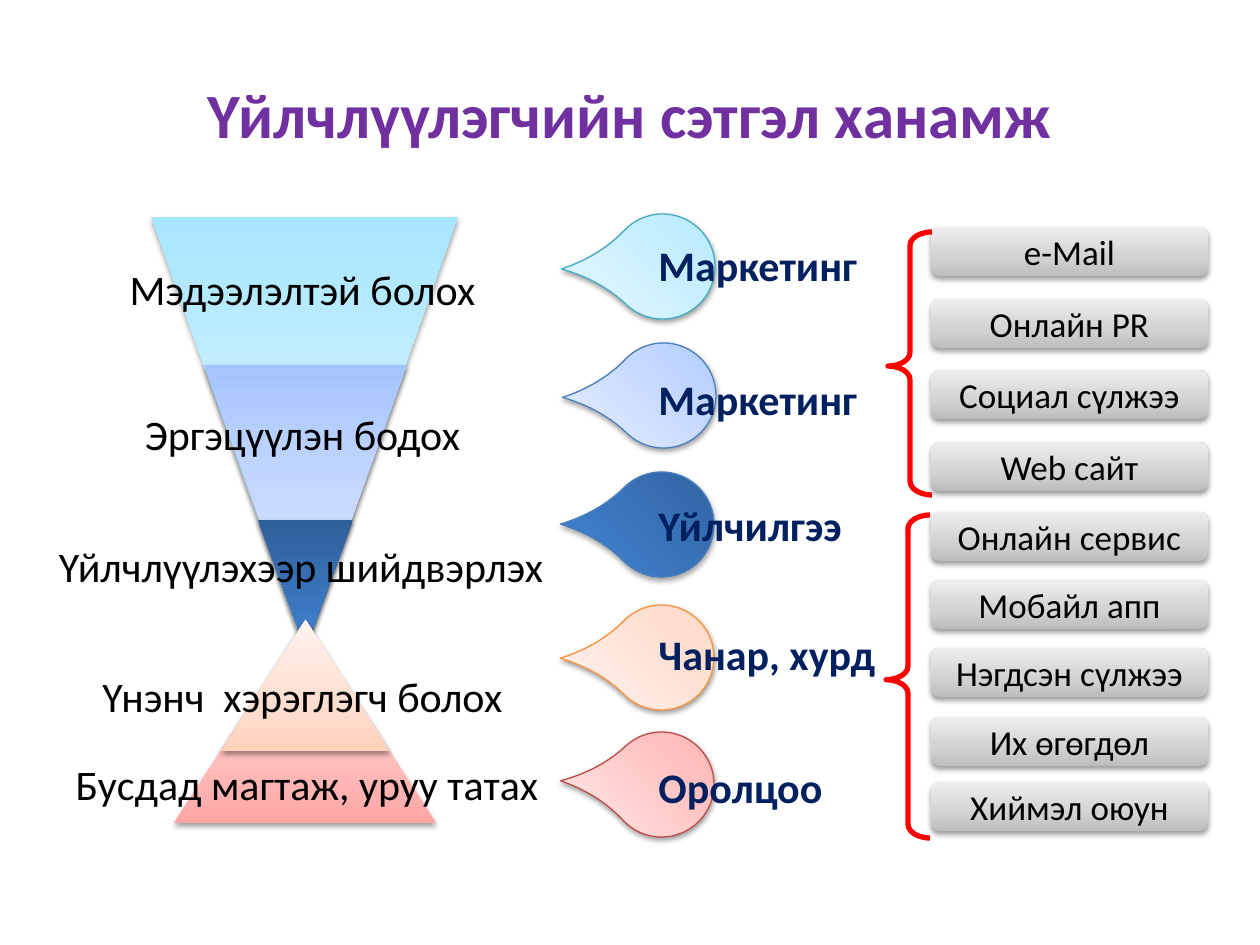
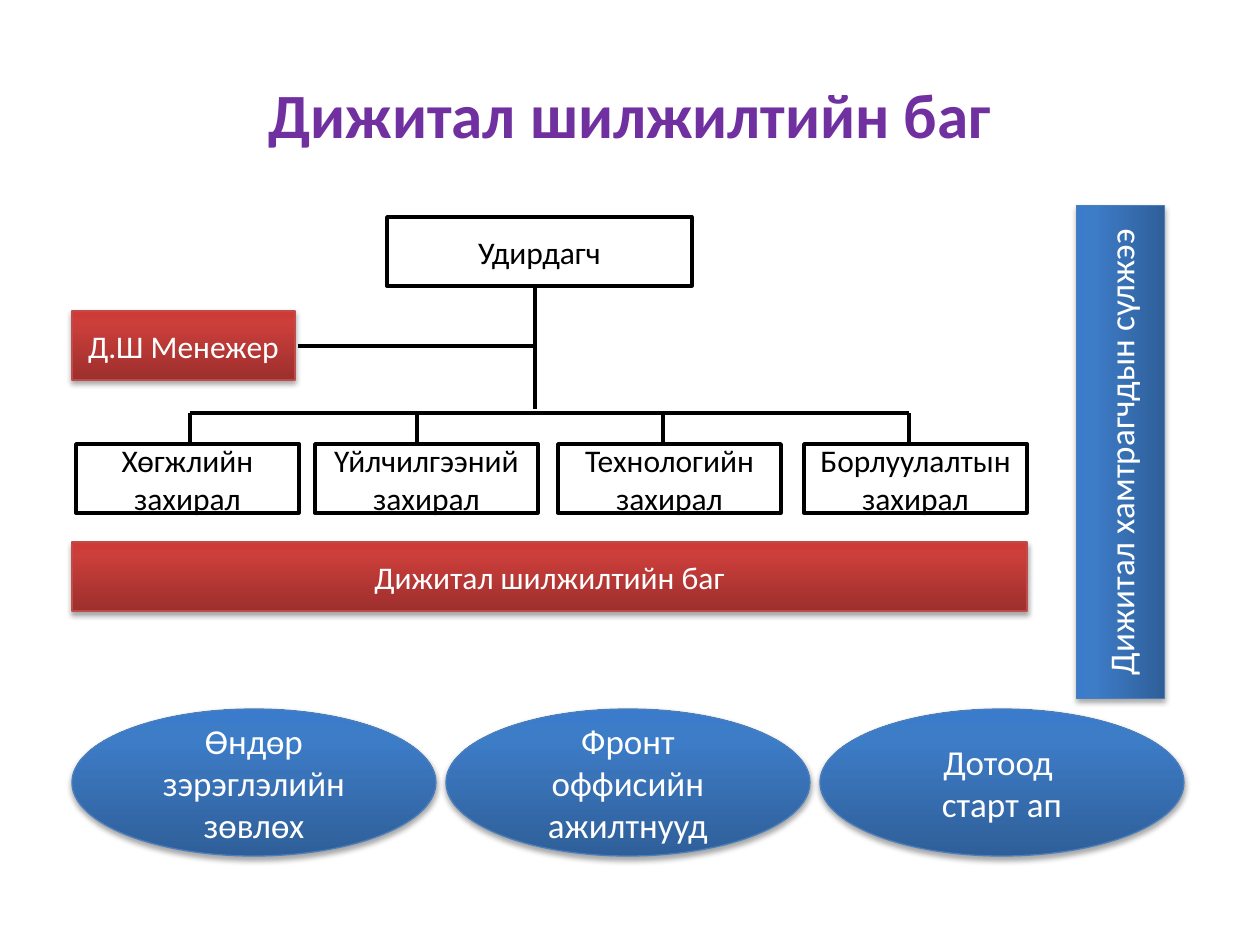
import copy
from collections import namedtuple

import pptx
import pptx.dml.color
import pptx.enum.shapes
import pptx.enum.text
import pptx.oxml
import pptx.oxml.ns
import pptx.util
from lxml import etree

RGB = pptx.dml.color.RGBColor
SHAPE = pptx.enum.shapes.MSO_SHAPE
ALIGN = pptx.enum.text.PP_ALIGN
ANCHOR = pptx.enum.text.MSO_ANCHOR
AUTO_SIZE = pptx.enum.text.MSO_AUTO_SIZE
qn = pptx.oxml.ns.qn

PX = 914400 / 126
FONT = "Calibri"
WHITE = RGB(0xFF, 0xFF, 0xFF)
BLACK = RGB(0, 0, 0)
PURPLE = RGB(0x70, 0x30, 0xA0)
NAVY = RGB(0x00, 0x20, 0x60)
RED = RGB(0xFF, 0, 0)

Theme = namedtuple("Theme", "stops outline shadow_alpha shadow_distance")


def pale(bottom, middle, top, outline=None):
    stops = [(0, bottom), (0.35, middle), (1, top)]
    return Theme(stops, outline, 38000, 20000)


def strong(bottom, middle, top, outline):
    stops = [(0, bottom), (0.8, middle), (1, top)]
    return Theme(stops, outline, 35000, 23000)


AQUA = pale(RGB(0xA7, 0xE6, 0xFF), RGB(0xC1, 0xED, 0xFF), RGB(0xE7, 0xF8, 0xFF), RGB(0x46, 0xAA, 0xC5))
SKY = pale(RGB(0xA4, 0xC4, 0xFF), RGB(0xBF, 0xD4, 0xFF), RGB(0xE6, 0xEE, 0xFF), RGB(0x4B, 0x7E, 0xBC))
PEACH = pale(RGB(0xFF, 0xD2, 0xBD), RGB(0xFF, 0xDE, 0xD0), RGB(0xFF, 0xF2, 0xED), RGB(0xF6, 0x92, 0x40))
ROSE = pale(RGB(0xFF, 0xA6, 0xA5), RGB(0xFF, 0xC0, 0xBF), RGB(0xFF, 0xE7, 0xE7), RGB(0xBF, 0x4C, 0x48))
GREY = pale(RGB(0xBD, 0xBD, 0xBD), RGB(0xD1, 0xD1, 0xD1), RGB(0xEE, 0xEE, 0xEE))
BLUE = strong(RGB(0x2F, 0x5F, 0x99), RGB(0x3D, 0x7C, 0xC7), RGB(0x3A, 0x7C, 0xCB), RGB(0x4B, 0x7E, 0xBC))
BRICK = strong(RGB(0x9C, 0x2F, 0x2D), RGB(0xCB, 0x3E, 0x3A), RGB(0xCE, 0x3B, 0x37), RGB(0xBF, 0x4C, 0x48))


def emu(*lengths):
    return [round(length * PX) for length in lengths]


def write(frame, text, size, color, align=ALIGN.CENTER, bold=False):
    frame.word_wrap = True
    frame.text = text
    for paragraph in frame.paragraphs:
        paragraph.alignment = align
        for run in paragraph.runs:
            run.font.name = FONT
            run.font.size = pptx.util.Pt(size)
            run.font.bold = bold
            run.font.color.rgb = color


def add_titled_slide(deck, title):
    slide = deck.slides.add_slide(deck.slide_layouts[5])
    heading = slide.shapes.title
    heading.left, heading.top, heading.width, heading.height = emu(0, 69, 1260, 89)
    write(heading.text_frame, title, 36, PURPLE, bold=True)
    return slide


def add_label(slide, box, text, color=BLACK, align=ALIGN.CENTER, bold=False):
    label = slide.shapes.add_textbox(*emu(*box))
    write(label.text_frame, text, 24, color, align, bold)
    label.text_frame.auto_size = AUTO_SIZE.SHAPE_TO_FIT_TEXT


def add_plain_shape(slide, kind, box, line_color=None, line_width=0.75):
    shape = slide.shapes.add_shape(kind, *emu(*box))
    shape.shadow.inherit = False
    if line_color is None:
        shape.line.fill.background()
    else:
        shape.line.color.rgb = line_color
        shape.line.width = pptx.util.Pt(line_width)
    return shape


def apply_gradient(shape, stops):
    """Fill upwards from the first stop to the last of three."""
    shape.fill.gradient()
    shape.fill.gradient_angle = 90
    stop_list = shape._element.spPr.find(qn("a:gradFill")).find(qn("a:gsLst"))
    stop_list.append(copy.deepcopy(stop_list[0]))
    for stop, (position, color) in zip(shape.fill.gradient_stops, stops):
        stop.position = position
        stop.color.rgb = color


def apply_shadow(shape, alpha, distance):
    effects = shape._element.spPr.find(qn("a:effectLst"))
    shadow = etree.SubElement(effects, qn("a:outerShdw"), blurRad="40000",
                              dist=str(distance), dir="5400000", rotWithShape="0")
    color = etree.SubElement(shadow, qn("a:srgbClr"), val="000000")
    etree.SubElement(color, qn("a:alpha"), val=str(alpha))


def add_glossy_shape(slide, kind, box, theme, rotation=0, outlined=True):
    shape = add_plain_shape(slide, kind, box, theme.outline if outlined else None)
    shape.rotation = rotation
    apply_gradient(shape, theme.stops)
    apply_shadow(shape, theme.shadow_alpha, theme.shadow_distance)
    return shape


def add_glossy_box(slide, kind, box, theme, text, size, color=WHITE, rotation=0):
    shape = add_glossy_shape(slide, kind, box, theme, rotation)
    shape.text_frame.vertical_anchor = ANCHOR.MIDDLE
    write(shape.text_frame, text, size, color)


def add_role_box(slide, box, text):
    role = add_plain_shape(slide, SHAPE.RECTANGLE, box, BLACK, 2)
    role.fill.solid()
    role.fill.fore_color.rgb = WHITE
    role.text_frame.vertical_anchor = ANCHOR.MIDDLE
    write(role.text_frame, text, 18, BLACK)


def add_brace(slide, box):
    brace = add_plain_shape(slide, SHAPE.LEFT_BRACE, box, RED, 3)
    brace.fill.background()
    brace.adjustments[0] = 0.31
    brace.adjustments[1] = 0.51


def add_line(slide, *ends):
    line = slide.shapes.add_connector(pptx.enum.shapes.MSO_CONNECTOR.STRAIGHT, *emu(*ends))
    line.line.color.rgb = BLACK
    line.line.width = pptx.util.Pt(2.25)
    etree.SubElement(line._element.spPr, qn("a:effectLst"))


def build_satisfaction_slide(deck):
    slide = add_titled_slide(deck, "Үйлчлүүлэгчийн сэтгэл ханамж")

    funnel = [
        ((151, 217, 307, 433), AQUA, 180),
        ((174, 622, 262, 201), ROSE, 0),
        ((204, 365, 203, 282), SKY, 180),
        ((258, 520, 95, 129), BLUE, 180),
        ((221, 620, 169, 131), PEACH, 0),
    ]
    for box, theme, rotation in funnel:
        add_glossy_shape(slide, SHAPE.ISOSCELES_TRIANGLE, box, theme, rotation, outlined=False)

    stages = [
        (72, 257, 461, "Мэдээлэлтэй болох"),
        (72, 402, 461, "Эргэцүүлэн бодох"),
        (23, 534, 556, "Үйлчлүүлэхээр шийдвэрлэх"),
        (72, 664, 461, "Үнэнч  хэрэглэгч болох"),
        (29, 752, 556, "Бусдад магтаж, уруу татах"),
    ]
    for left, top, width, text in stages:
        add_label(slide, (left, top, width, 63), text)

    drivers = [
        (610, 214, 223.6, AQUA, 233, "Маркетинг"),
        (611, 343, 223.9, SKY, 367, "Маркетинг"),
        (609, 472, 225.2, BLUE, 493, "Үйлчилгээ"),
        (609, 605, 224.6, PEACH, 622, "Чанар, хурд"),
        (609, 732, 227.1, ROSE, 755, "Оролцоо"),
    ]
    for left, top, rotation, theme, label_top, text in drivers:
        drop = add_glossy_shape(slide, SHAPE.TEAR, (left, top, 105, 105), theme, rotation)
        drop.adjustments[0] = 1.36
        add_label(slide, (646, label_top, 268, 63), text, NAVY, ALIGN.LEFT, bold=True)

    channels = [
        (227, "e-Mail"),
        (299, "Онлайн PR"),
        (370, "Социал сүлжээ"),
        (442, "Web сайт"),
        (512, "Онлайн сервис"),
        (580, "Мобайл апп"),
        (648, "Нэгдсэн сүлжээ"),
        (717, "Их өгөгдөл"),
        (782, "Хиймэл оюун"),
    ]
    for top, text in channels:
        add_glossy_box(slide, SHAPE.ROUNDED_RECTANGLE, (931, top, 277, 49), GREY, text, 20, BLACK)

    add_brace(slide, (888, 232, 44, 263))
    add_brace(slide, (886, 515, 44, 323))


def build_team_slide(deck):
    slide = add_titled_slide(deck, "Дижитал шилжилтийн баг")

    supporters = ["Өндөр зэрэглэлийн зөвлөх", "Фронт оффисийн ажилтнууд", "Дотоод \nстарт ап"]
    for index, text in enumerate(supporters):
        add_glossy_box(slide, SHAPE.OVAL, (72 + 374 * index, 709, 364, 147), BLUE, text, 20)

    add_role_box(slide, (387, 217, 305, 69), "Удирдагч")
    add_glossy_box(slide, SHAPE.RECTANGLE, (72, 311, 223, 69), BRICK, "Д.Ш Менежер", 18)
    add_line(slide, 535, 286, 535, 409)
    add_line(slide, 298, 346, 536, 346)

    directors = [
        (76, 190, "Хөгжлийн\nзахирал"),
        (315, 417, "Үйлчилгээний\nзахирал"),
        (558, 663, "Технологийн\nзахирал"),
        (804, 909, "Борлуулалтын\vзахирал"),
    ]
    add_line(slide, directors[0][1], 413, directors[-1][1], 413)
    for left, branch, text in directors:
        add_role_box(slide, (left, 444, 223, 69), text)
        add_line(slide, branch, 413, branch, 444)

    add_glossy_box(slide, SHAPE.RECTANGLE, (72, 542, 955, 69), BRICK, "Дижитал шилжилтийн баг", 18)
    add_glossy_box(slide, SHAPE.RECTANGLE, (874, 408, 493, 88), BLUE,
                   "Дижитал хамтрагчдын сүлжээ", 20, rotation=270)


def main():
    deck = pptx.Presentation()
    deck.slide_width, deck.slide_height = emu(1260, 945)
    build_satisfaction_slide(deck)
    build_team_slide(deck)
    deck.save("out.pptx")


if __name__ == "__main__":
    main()
